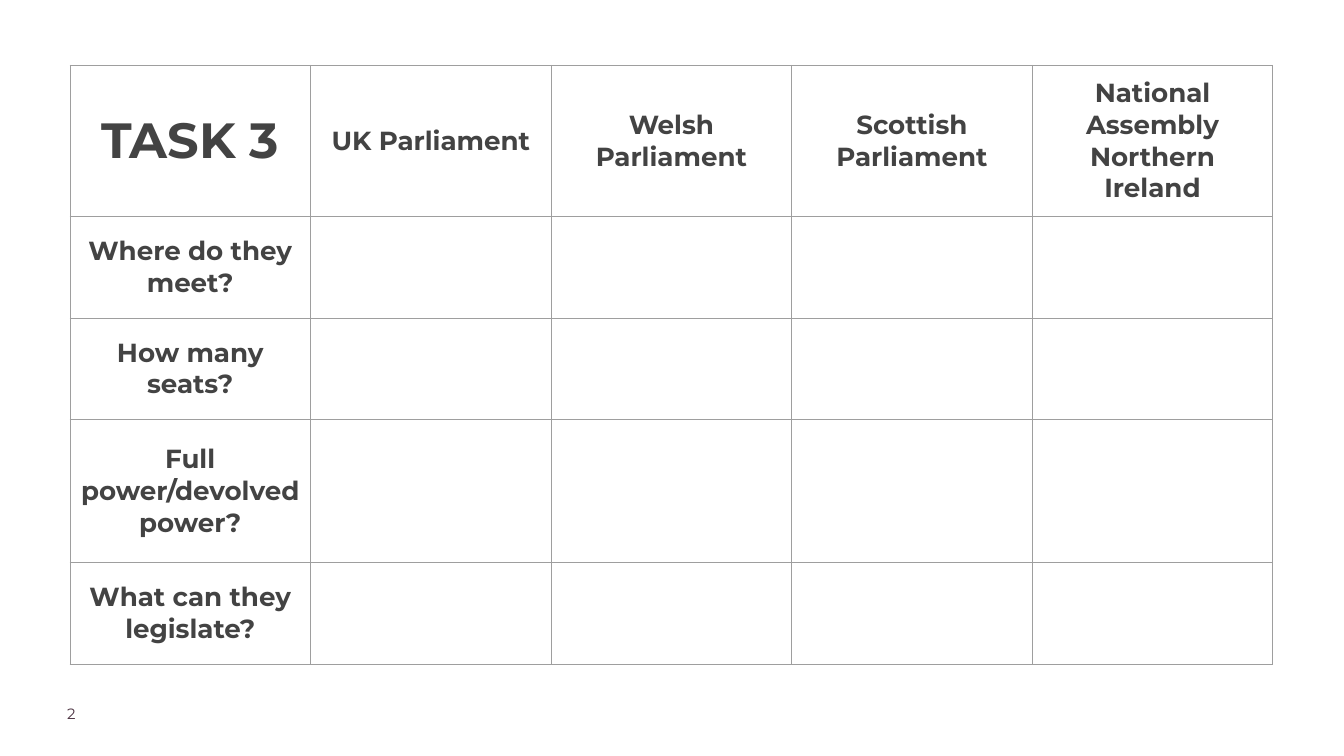
from lxml import etree
from pptx import Presentation
from pptx.dml.color import RGBColor
from pptx.enum import text
from pptx.oxml.ns import qn
from pptx.util import Inches, Pt

FONT = "Montserrat"
INK, PLUM, GREY = "434343", "4B3241", "9E9E9E"
HEADS = [
    "TASK 3",
    "UK Parliament",
    "Welsh Parliament",
    "Scottish Parliament",
    "National Assembly Northern Ireland",
]
ASKS = [
    "Where do they meet?",
    "How many seats?",
    "Full power/devolved power?",
    "What can they legislate?",
]
ROWS = [2.25, 1.51, 1.51, 2.13, 1.51]
COL = 3.58
PAGE = "2"


def write(para, words, size, color, bold=False):
    run = para.add_run()
    run.text = words
    font = run.font
    font.name, font.size, font.bold = FONT, Pt(size), bold
    font.color.rgb = RGBColor.from_string(color)


def border(cell):
    """Draw a thin grey line on all four sides; lines must precede the fill."""
    props = cell._tc.get_or_add_tcPr()
    for i, side in enumerate("LRTB"):
        line = etree.Element(qn(f"a:ln{side}"), w=str(Pt(0.75)))
        fill = etree.SubElement(line, qn("a:solidFill"))
        etree.SubElement(fill, qn("a:srgbClr"), val=GREY)
        props.insert(i, line)


def add_grid(slide):
    frame = slide.shapes.add_table(
        len(ROWS), len(HEADS), Inches(1.04), Inches(0.97),
        Inches(COL * len(HEADS)), Inches(sum(ROWS)))
    table = frame.table
    table.first_row = table.horz_banding = False
    for col in table.columns:
        col.width = Inches(COL)
    for row, high in zip(table.rows, ROWS):
        row.height = Inches(high)

    for cell in table.iter_cells():
        cell.fill.background()
        border(cell)
        cell.vertical_anchor = text.MSO_ANCHOR.MIDDLE
        cell.margin_left = cell.margin_right = Inches(0.1)
        cell.margin_top = cell.margin_bottom = Inches(0.1)

    labels = [(0, c, head) for c, head in enumerate(HEADS)]
    labels += [(r, 0, ask) for r, ask in enumerate(ASKS, 1)]
    for r, c, words in labels:
        para = table.cell(r, c).text_frame.paragraphs[0]
        para.alignment = text.PP_ALIGN.CENTER
        write(para, words, 53 if r == c == 0 else 28, INK, bold=True)


def add_page(slide):
    box = slide.shapes.add_textbox(
        Inches(1), Inches(10.48), Inches(1.57), Inches(0.39))
    frame = box.text_frame
    frame.word_wrap = True
    frame.margin_left = frame.margin_right = 0
    frame.margin_top = frame.margin_bottom = 0
    write(frame.paragraphs[0], PAGE, 16, PLUM)


def main():
    deck = Presentation()
    deck.slide_width, deck.slide_height = Inches(20), Inches(11.25)
    slide = deck.slides.add_slide(deck.slide_layouts[6])
    add_page(slide)
    add_grid(slide)
    deck.save("out.pptx")


if __name__ == "__main__":
    main()
